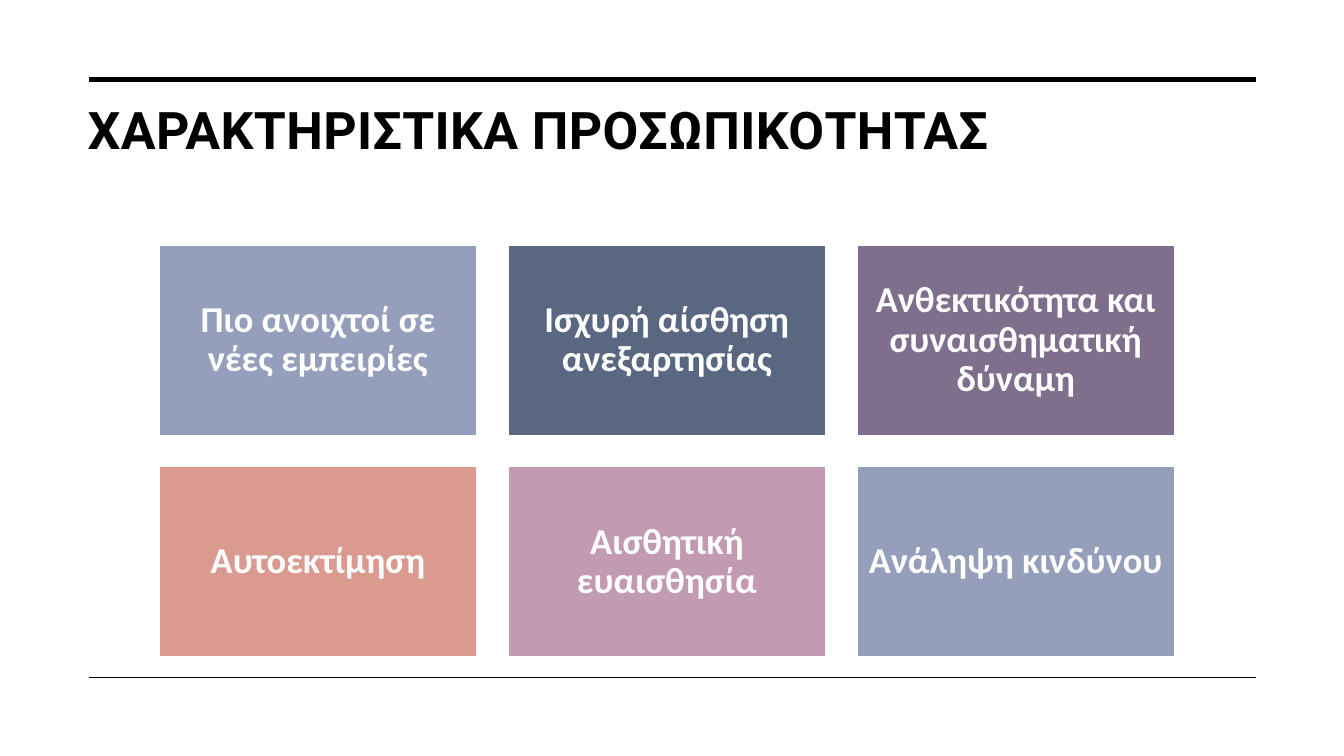
import pptx
import pptx.dml.color
import pptx.enum.shapes
import pptx.enum.text
import pptx.oxml.ns
import pptx.util
from pptx.util import Inches

BLACK, WHITE = "000000", "FFFFFF"

TRAITS = [
    ("Πιο ανοιχτοί σε νέες εμπειρίες", "959EBB"),
    ("Ισχυρή αίσθηση ανεξαρτησίας", "596781"),
    ("Ανθεκτικότητα και συναισθηματική δύναμη", "7F6E8C"),
    ("Αυτοεκτίμηση", "DB9A8F"),
    ("Αισθητική ευαισθησία", "C29AB1"),
    ("Ανάληψη κινδύνου", "959EBB"),
]
COLUMNS = 3
GRID_LEFT, GRID_TOP = 1.58, 2.43
CARD_W, CARD_H = 3.15, 1.89
STEP_X, STEP_Y = 3.46, 2.2


def rgb(value):
    return pptx.dml.color.RGBColor.from_string(value)


def format_text(p, font, size, color):
    p.line_spacing = 0.9
    r = p.runs[0]
    r.font.name = font
    r.font.size = pptx.util.Pt(size)
    r.font.bold = True
    r.font.color.rgb = rgb(color)
    return r


def add_rule(s, y, width):
    line = s.shapes.add_connector(
        pptx.enum.shapes.MSO_CONNECTOR.STRAIGHT,
        Inches(0.88), Inches(y), Inches(12.46), Inches(y))
    line.line.color.rgb = rgb(BLACK)
    line.line.width = pptx.util.Pt(width)
    # An empty effect list removes the theme shadow
    sp_pr = line._element.spPr
    sp_pr.append(sp_pr.makeelement(pptx.oxml.ns.qn("a:effectLst"), {}))


def add_title(s, text):
    box = s.shapes.add_textbox(
        Inches(0.77), Inches(0.99), Inches(11.69), Inches(1.26))
    tf = box.text_frame
    tf.word_wrap = True
    tf.text = text
    r = format_text(tf.paragraphs[0], "Roboto", 37, BLACK)
    # Letter spacing in hundredths of a point
    r._r.get_or_add_rPr().set("spc", "30")


def add_card(s, left, top, text, fill):
    sp = s.shapes.add_shape(
        pptx.enum.shapes.MSO_SHAPE.RECTANGLE,
        Inches(left), Inches(top), Inches(CARD_W), Inches(CARD_H))
    sp.shadow.inherit = False
    sp.fill.solid()
    sp.fill.fore_color.rgb = rgb(fill)
    sp.line.color.rgb = rgb(WHITE)
    sp.line.width = pptx.util.Pt(1)
    tf = sp.text_frame
    tf.word_wrap = True
    tf.vertical_anchor = pptx.enum.text.MSO_ANCHOR.MIDDLE
    tf.margin_left = tf.margin_right = Inches(0.11)
    tf.margin_top = tf.margin_bottom = Inches(0.11)
    tf.text = text
    p = tf.paragraphs[0]
    p.alignment = pptx.enum.text.PP_ALIGN.CENTER
    format_text(p, "Calibri", 26, WHITE)


def main():
    prs = pptx.Presentation()
    prs.slide_width = Inches(13.33)
    prs.slide_height = Inches(7.5)
    s = prs.slides.add_slide(prs.slide_layouts[6])

    # Rules above and below the content
    add_rule(s, 0.79, 3.5)
    add_rule(s, 6.72, 1)

    # Title
    add_title(s, "ΧΑΡΑΚΤΗΡΙΣΤΙΚΑ ΠΡΟΣΩΠΙΚΟΤΗΤΑΣ")

    # Grid of personality traits
    for i, (text, fill) in enumerate(TRAITS):
        row, col = divmod(i, COLUMNS)
        add_card(s, GRID_LEFT + col * STEP_X, GRID_TOP + row * STEP_Y, text, fill)

    prs.save("out.pptx")


if __name__ == "__main__":
    main()
